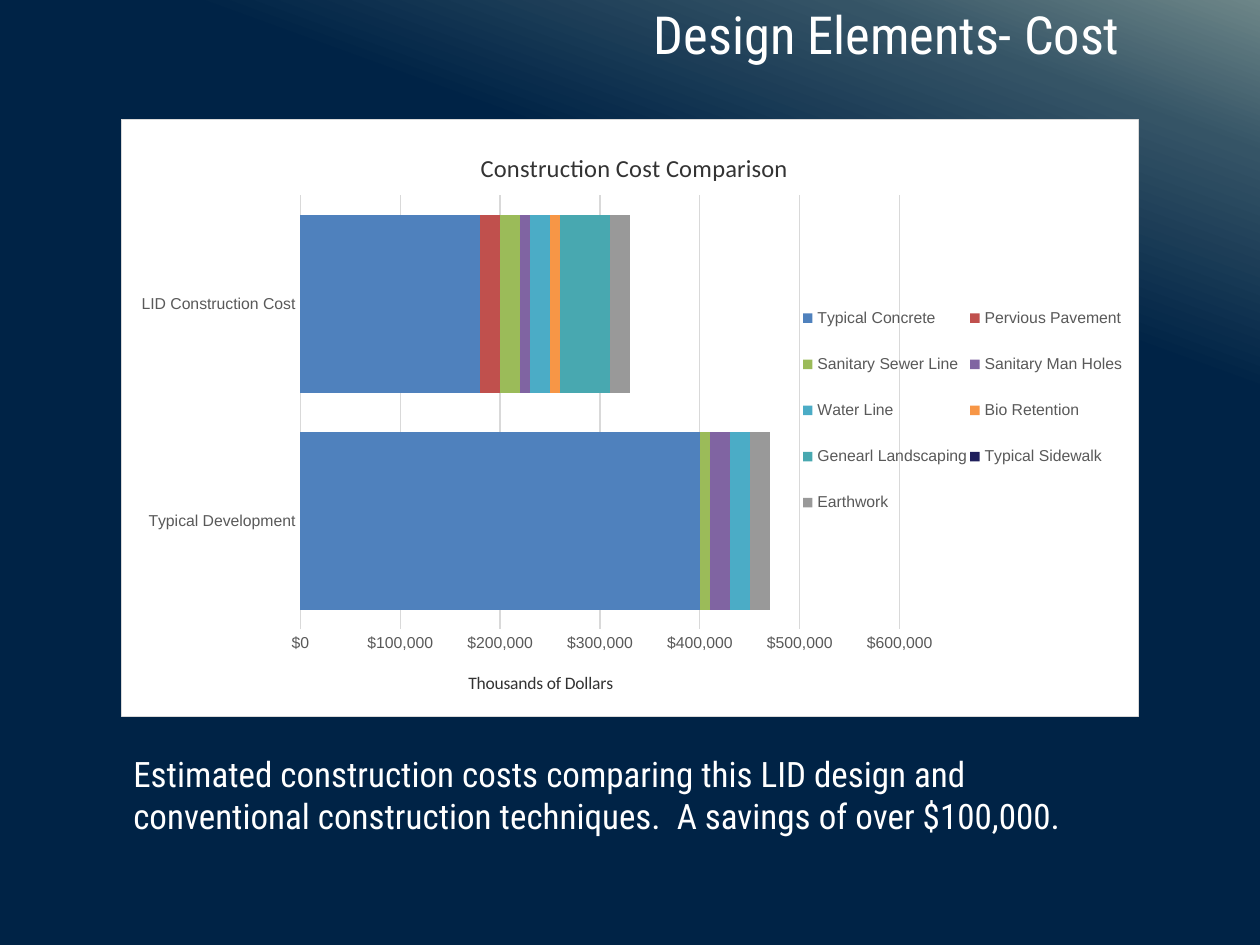
from dataclasses import dataclass
from typing import NamedTuple

from lxml.etree import SubElement
from pptx import Presentation
from pptx.chart.data import CategoryChartData
from pptx.dml.color import RGBColor
from pptx.enum.chart import XL_CHART_TYPE, XL_LEGEND_POSITION, XL_TICK_MARK
from pptx.enum.text import MSO_ANCHOR, PP_ALIGN
from pptx.oxml import parse_xml
from pptx.oxml.ns import nsdecls, qn
from pptx.util import Emu, Pt

PX_PER_INCH = 126


@dataclass(frozen=True)
class Theme:
    text_font: str = "Roboto Condensed"
    chart_font: str = "Arial"
    chart_title_font: str = "Calibri"
    white: str = "FFFFFF"
    heading: str = "333333"
    label: str = "595959"
    rule: str = "D9D9D9"
    title_size: int = 30
    body_size: int = 20
    chart_title_size: int = 14
    axis_title_size: int = 10
    label_size: int = 9
    rule_width: float = 0.75
    gradient: tuple = ((0, "6D8688"), (11, "355466"), (28, "002346"))


class Box(NamedTuple):
    x: int
    y: int
    w: int
    h: int


class CostItem(NamedTuple):
    name: str
    typical: int
    lid: int
    color: str


THEME = Theme()
TITLE = Box(514, 0, 746, 67)
BODY = Box(121, 746, 1018, 97)
CHART = Box(121, 119, 1018, 598)
PLOT = Box(300, 195, 600, 435)
LEGEND = Box(800, 281, 326, 259)
CHART_TITLE = (476, 146)
AXIS_TITLE = (465, 669)

COSTS = [
    CostItem("Typical Concrete", 400000, 180000, "4F81BD"),
    CostItem("Pervious Pavement", 0, 20000, "C0504D"),
    CostItem("Sanitary Sewer Line", 10000, 20000, "9BBB59"),
    CostItem("Sanitary Man Holes", 20000, 10000, "8064A2"),
    CostItem("Water Line", 20000, 20000, "4BACC6"),
    CostItem("Bio Retention", 0, 10000, "F79646"),
    CostItem("Genearl Landscaping", 0, 50000, "48A8B0"),
    CostItem("Typical Sidewalk", 0, 0, "1F1F5C"),
    CostItem("Earthwork", 20000, 20000, "999999"),
]


def px(n: int) -> Emu:
    return Emu(round(n * 914400 / PX_PER_INCH))


def style_font(font, name: str, size: int, color: str) -> None:
    font.name, font.size, font.bold = name, Pt(size), False
    font.color.rgb = RGBColor.from_string(color)


def add_run(tf, text: str, name: str, size: int, color: str) -> None:
    r = tf.paragraphs[0].add_run()
    r.text = text
    style_font(r.font, name, size, color)


def style_rule(line) -> None:
    line.color.rgb = RGBColor.from_string(THEME.rule)
    line.width = Pt(THEME.rule_width)


def set_background(s) -> None:
    fill = s.background.fill
    fill.gradient()
    fill.gradient_angle = 250
    stops = s.element.find(".//" + qn("a:gsLst"))
    for stop in list(stops):
        stops.remove(stop)
    for percent, color in THEME.gradient:
        stop = SubElement(stops, qn("a:gs"), pos=str(percent * 1000))
        SubElement(stop, qn("a:srgbClr"), val=color)


def set_layout(parent, index: int, x: int, y: int, w: int = 0, h: int = 0,
               inner: bool = False) -> None:
    """Pin a chart part to slide pixels, as fractions of the chart frame."""
    for old in parent.findall(qn("c:layout")):
        parent.remove(old)
    layout = parse_xml(f"<c:layout {nsdecls('c')}><c:manualLayout/></c:layout>")
    parent.insert(index, layout)
    settings = [("layoutTarget", "inner")] if inner else []
    settings += [("xMode", "edge"), ("yMode", "edge"),
                 ("x", (x - CHART.x) / CHART.w), ("y", (y - CHART.y) / CHART.h)]
    if w:
        settings += [("w", w / CHART.w), ("h", h / CHART.h)]
    for tag, value in settings:
        SubElement(layout[0], qn(f"c:{tag}"), val=str(value))


def set_chart_frame(chart) -> None:
    space = chart.element
    space.find(qn("c:chart")).addnext(parse_xml(
        f"<c:spPr {nsdecls('c', 'a')}>"
        f'<a:solidFill><a:srgbClr val="{THEME.white}"/></a:solidFill>'
        f'<a:ln w="{Pt(THEME.rule_width)}"><a:solidFill>'
        f'<a:srgbClr val="{THEME.rule}"/></a:solidFill></a:ln></c:spPr>'))


def add_heading(title, text: str, size: int, at: tuple) -> None:
    add_run(title.text_frame, text, THEME.chart_title_font, size, THEME.heading)
    set_layout(title.element if hasattr(title, "element") else title._element, 1, *at)


def style_axes(chart) -> None:
    cat, val = chart.category_axis, chart.value_axis
    for axis in (cat, val):
        axis.major_tick_mark = axis.minor_tick_mark = XL_TICK_MARK.NONE
        style_font(axis.tick_labels.font, THEME.chart_font, THEME.label_size, THEME.label)
    style_rule(cat.format.line)
    val.format.line.fill.background()
    val.minimum_scale, val.maximum_scale, val.major_unit = 0, 600000, 100000
    val.has_major_gridlines = True
    style_rule(val.major_gridlines.format.line)
    val.tick_labels.number_format = '"$"#,##0'
    val.tick_labels.number_format_is_linked = False
    add_heading(val.axis_title, "Thousands of Dollars", THEME.axis_title_size, AXIS_TITLE)


def add_cost_chart(s) -> None:
    data = CategoryChartData(number_format='"$"#,##0')
    data.categories = ["Typical Development", "LID Construction Cost"]
    for item in COSTS:
        data.add_series(item.name, (item.typical, item.lid))
    chart = s.shapes.add_chart(
        XL_CHART_TYPE.BAR_STACKED, *map(px, CHART), data).chart
    style_font(chart.font, THEME.chart_font, 10, "000000")
    set_chart_frame(chart)

    plot = chart.plots[0]
    plot.gap_width, plot.overlap, plot.vary_by_categories = 22, 100, False
    for series, item in zip(plot.series, COSTS):
        series.format.fill.solid()
        series.format.fill.fore_color.rgb = RGBColor.from_string(item.color)
    set_layout(chart.element.find(".//" + qn("c:plotArea")), 0, *PLOT, inner=True)

    chart.has_title = True
    add_heading(chart.chart_title, "Construction Cost Comparison",
                THEME.chart_title_size, CHART_TITLE)
    style_axes(chart)

    chart.has_legend = True
    legend = chart.legend
    legend.position = XL_LEGEND_POSITION.RIGHT
    legend.include_in_layout = False
    style_font(legend.font, THEME.chart_font, THEME.label_size, THEME.label)
    set_layout(chart.element.find(".//" + qn("c:legend")), 1, *LEGEND)


def add_title(s) -> None:
    sp = s.shapes.title
    sp.left, sp.top, sp.width, sp.height = map(px, TITLE)
    tf = sp.text_frame
    tf.vertical_anchor = MSO_ANCHOR.MIDDLE
    tf.paragraphs[0].alignment = PP_ALIGN.CENTER
    add_run(tf, "Design Elements- Cost", THEME.text_font, THEME.title_size, THEME.white)


def add_summary(s) -> None:
    tf = s.shapes.add_textbox(*map(px, BODY)).text_frame
    tf.word_wrap = True
    add_run(tf, "Estimated construction costs comparing this LID design and "
                "conventional construction techniques.  A savings of over $100,000.",
            THEME.text_font, THEME.body_size, THEME.white)


def main() -> None:
    prs = Presentation()
    prs.slide_width, prs.slide_height = px(1260), px(945)
    s = prs.slides.add_slide(prs.slide_layouts[5])
    set_background(s)
    add_title(s)
    add_summary(s)
    add_cost_chart(s)
    prs.save("out.pptx")


if __name__ == "__main__":
    main()
